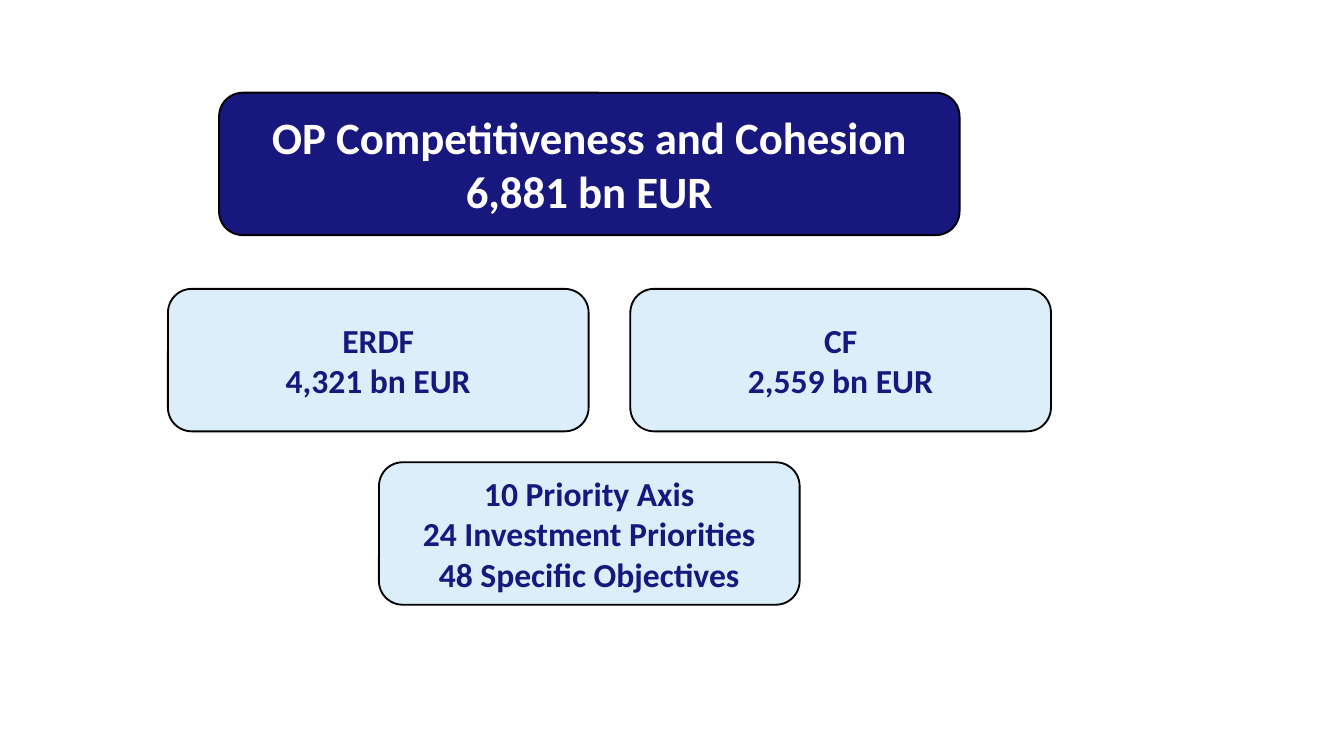
from pptx import Presentation
from pptx import util as u
from pptx.dml.color import RGBColor
from pptx.enum import shapes, text

NAVY = RGBColor(0x17, 0x17, 0x7D)
PALE_BLUE = RGBColor(0xDB, 0xEE, 0xFA)
WHITE = RGBColor(0xFF, 0xFF, 0xFF)
BLACK = RGBColor(0x00, 0x00, 0x00)

SLIDE_WIDTH = 10
SLIDE_HEIGHT = SLIDE_WIDTH * 9 / 16
BOX_WIDTH = 3.13
BOX_HEIGHT = 1.06
FUND_LEFT = 1.25
FUND_TOP = 2.15
FUND_GAP = 0.31


class SlideBuilder:
    font_name = "Calibri"

    def __init__(self, slide):
        self.slide = slide

    def box(self, left, top, lines, width=BOX_WIDTH, size=18, fill=PALE_BLUE, color=NAVY):
        shape = self.slide.shapes.add_shape(
            shapes.MSO_SHAPE.ROUNDED_RECTANGLE,
            u.Inches(left), u.Inches(top), u.Inches(width), u.Inches(BOX_HEIGHT),
        )
        shape.shadow.inherit = False
        shape.fill.solid()
        shape.fill.fore_color.rgb = fill
        shape.line.color.rgb = BLACK
        shape.line.width = u.Pt(1)
        frame = shape.text_frame
        frame.word_wrap = False
        frame.vertical_anchor = text.MSO_ANCHOR.MIDDLE
        for index, line in enumerate(lines):
            paragraph = frame.add_paragraph() if index else frame.paragraphs[0]
            paragraph.alignment = text.PP_ALIGN.CENTER
            run = paragraph.add_run()
            run.text = line
            run.font.name = self.font_name
            run.font.size = u.Pt(size)
            run.font.bold = True
            run.font.color.rgb = color


def main():
    presentation = Presentation()
    presentation.slide_width = u.Inches(SLIDE_WIDTH)
    presentation.slide_height = u.Inches(SLIDE_HEIGHT)
    builder = SlideBuilder(presentation.slides.add_slide(presentation.slide_layouts[6]))

    builder.box(1.63, 0.69, ["OP Competitiveness and Cohesion", "6,881 bn EUR"],
                width=5.51, size=24, fill=NAVY, color=WHITE)
    funds = [("ERDF", "4,321 bn EUR"), ("CF", "2,559 bn EUR")]
    for column, fund in enumerate(funds):
        builder.box(FUND_LEFT + column * (BOX_WIDTH + FUND_GAP), FUND_TOP, fund)
    builder.box(2.82, 3.44, ["10 Priority Axis", "24 Investment Priorities", "48 Specific Objectives"])

    presentation.save("out.pptx")


if __name__ == "__main__":
    main()
